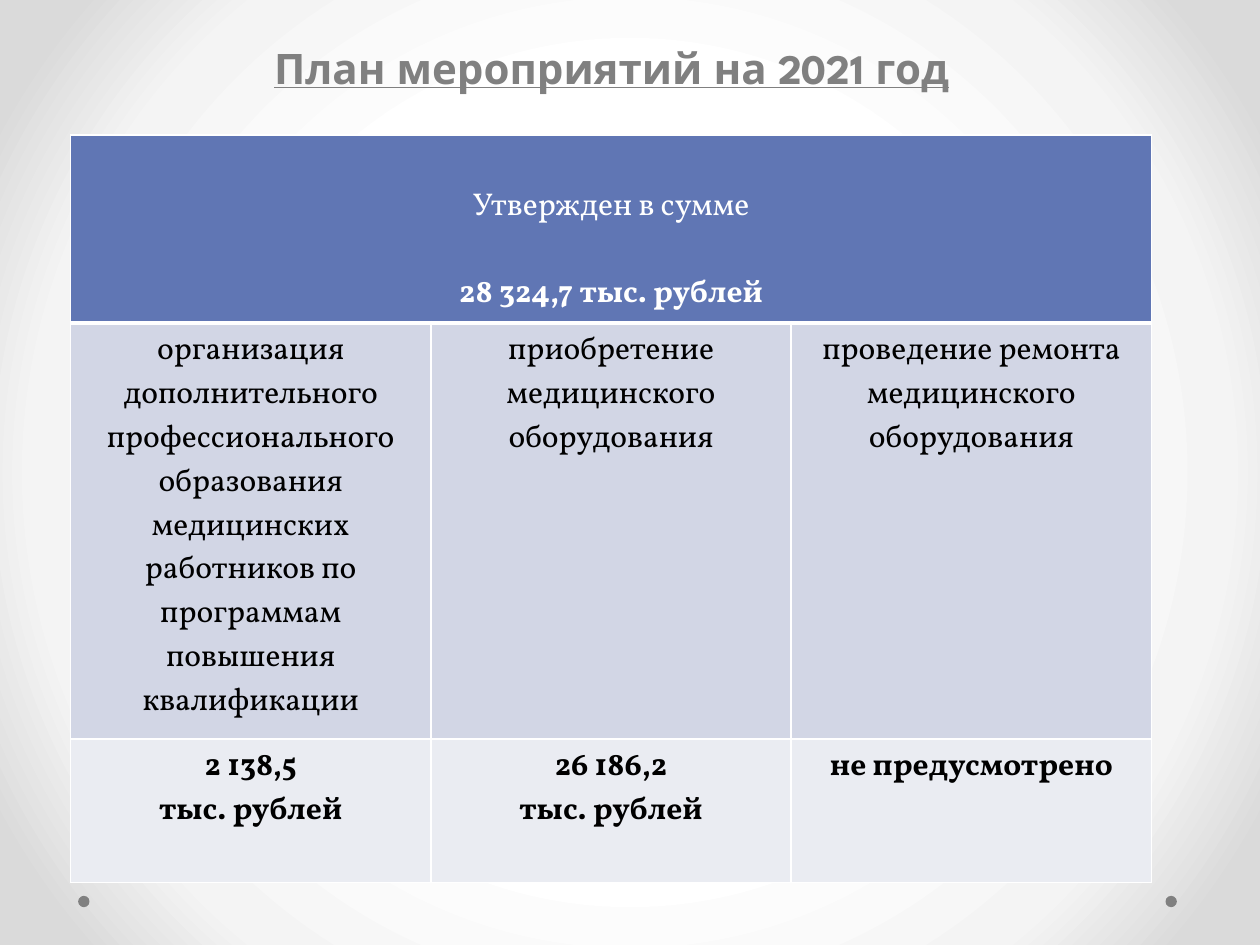
from dataclasses import dataclass

from lxml import etree
from pptx import Presentation, util as u
from pptx.dml.color import RGBColor
from pptx.enum import shapes, text
from pptx.oxml import parse_xml
from pptx.oxml.ns import qn

WIDTH, HEIGHT = 10, 7.5
GREY, WHITE, BLACK = "808080", "FFFFFF", "000000"
TITLE_FONT, TABLE_FONT = "League Spartan", "Vollkorn"
LINE_HEIGHT = 25  # points, one line of table text
COLUMN = 2.86
A_NS = "http://schemas.openxmlformats.org/drawingml/2006/main"


@dataclass
class Line:
    words: str
    bold: bool = False


@dataclass
class Row:
    height: float
    fill: str
    ink: str
    cells: list[list[Line]]
    top_margin: float = 0.05
    gap: float = 0
    top_border: float = 1
    bottom_border: float = 1


ROWS = [
    Row(1.49, "6076B4", WHITE,
        [[Line("Утвержден в сумме"), Line("28 324,7 тыс. рублей", True)]],
        top_margin=0.4, gap=LINE_HEIGHT, bottom_border=3),
    Row(3.3, "D2D6E5", BLACK,
        [[Line("организация дополнительного профессионального образования "
               "медицинских работников по программам повышения квалификации")],
         [Line("приобретение медицинского оборудования")],
         [Line("проведение ремонта медицинского оборудования")]],
        top_border=3),
    Row(1.14, "EAECF2", BLACK,
        [[Line("2 138,5", True), Line("тыс. рублей", True)],
         [Line("26 186,2", True), Line("тыс. рублей", True)],
         [Line("не предусмотрено", True)]]),
]


def color(value: str) -> RGBColor:
    return RGBColor.from_string(value)


def format_font(font, ink: str, **values) -> None:
    for name, value in values.items():
        setattr(font, name, value)
    font.color.rgb = color(ink)


def paint_background(slide) -> None:
    """Radial gradient from a white centre to grey corners."""
    slide.background.fill.solid()
    solid = slide.element.find(".//" + qn("p:bgPr"))[0]
    stops = "".join(
        f'<a:gs pos="{share * 1000}"><a:srgbClr val="{value}"/></a:gs>'
        for share, value in ((50, WHITE), (76, "F4F4F4"), (92, "DADADA")))
    solid.getparent().replace(solid, parse_xml(
        f'<a:gradFill xmlns:a="{A_NS}" rotWithShape="1"><a:gsLst>{stops}</a:gsLst>'
        '<a:path path="circle"><a:fillToRect l="50000" t="50000" r="50000" b="50000"/>'
        '</a:path></a:gradFill>'))


def add_dot(slide, left: float) -> None:
    size = u.Inches(0.09)
    dot = slide.shapes.add_shape(shapes.MSO_SHAPE.OVAL, u.Inches(left),
                                 u.Inches(7.11), size, size)
    dot.shadow.inherit = False
    dot.fill.solid()
    dot.fill.fore_color.rgb = color(GREY)
    dot.line.fill.background()


def set_title(slide, words: str) -> None:
    title = slide.shapes.title
    box = {"left": 0.21, "top": 0.29, "width": 9.29, "height": 0.6}
    for name, value in box.items():
        setattr(title, name, u.Inches(value))
    frame = title.text_frame
    frame.text = words
    frame.vertical_anchor = text.MSO_ANCHOR.TOP
    frame.auto_size = text.MSO_AUTO_SIZE.NONE
    heading = frame.paragraphs[0]
    heading.alignment = text.PP_ALIGN.CENTER
    format_font(heading.runs[0].font, GREY, name=TITLE_FONT, size=u.Pt(24),
                bold=True, underline=True)


def set_borders(cell, row: Row) -> None:
    widths = {"lnL": 1, "lnR": 1, "lnT": row.top_border, "lnB": row.bottom_border}
    properties = cell._tc.get_or_add_tcPr()
    for side, width in widths.items():
        border = etree.SubElement(properties, qn(f"a:{side}"), w=str(u.Pt(width)))
        fill = etree.SubElement(border, qn("a:solidFill"))
        etree.SubElement(fill, qn("a:srgbClr"), val=WHITE)


def fill_cell(cell, row: Row, lines: list[Line]) -> None:
    cell.margin_top = u.Inches(row.top_margin)
    frame = cell.text_frame
    for index, line in enumerate(lines):
        paragraph = frame.add_paragraph() if index else frame.paragraphs[0]
        paragraph.alignment = text.PP_ALIGN.CENTER
        if index and row.gap:
            paragraph.space_before = u.Pt(row.gap)
        run = paragraph.add_run()
        run.text = line.words
        format_font(run.font, row.ink, name=TABLE_FONT, size=u.Pt(18), bold=line.bold)


def add_plan(slide, rows: list[Row]) -> None:
    columns = max(len(row.cells) for row in rows)
    plan = slide.shapes.add_table(
        len(rows), columns, u.Inches(0.56), u.Inches(1.07),
        u.Inches(COLUMN * columns), u.Inches(sum(row.height for row in rows))).table
    for column in plan.columns:
        column.width = u.Inches(COLUMN)
    for index, row in enumerate(rows):
        plan.rows[index].height = u.Inches(row.height)
        for cell in plan.rows[index].cells:
            set_borders(cell, row)
            cell.fill.solid()
            cell.fill.fore_color.rgb = color(row.fill)
        for place, lines in enumerate(row.cells):
            fill_cell(plan.cell(index, place), row, lines)
    plan.cell(0, 0).merge(plan.cell(0, columns - 1))


def main() -> None:
    deck = Presentation()
    deck.slide_width, deck.slide_height = u.Inches(WIDTH), u.Inches(HEIGHT)
    slide = deck.slides.add_slide(deck.slide_layouts[5])
    paint_background(slide)
    for left in (0.62, 9.25):
        add_dot(slide, left)
    set_title(slide, "План мероприятий на 2021 год")
    add_plan(slide, ROWS)
    deck.save("out.pptx")


if __name__ == "__main__":
    main()
